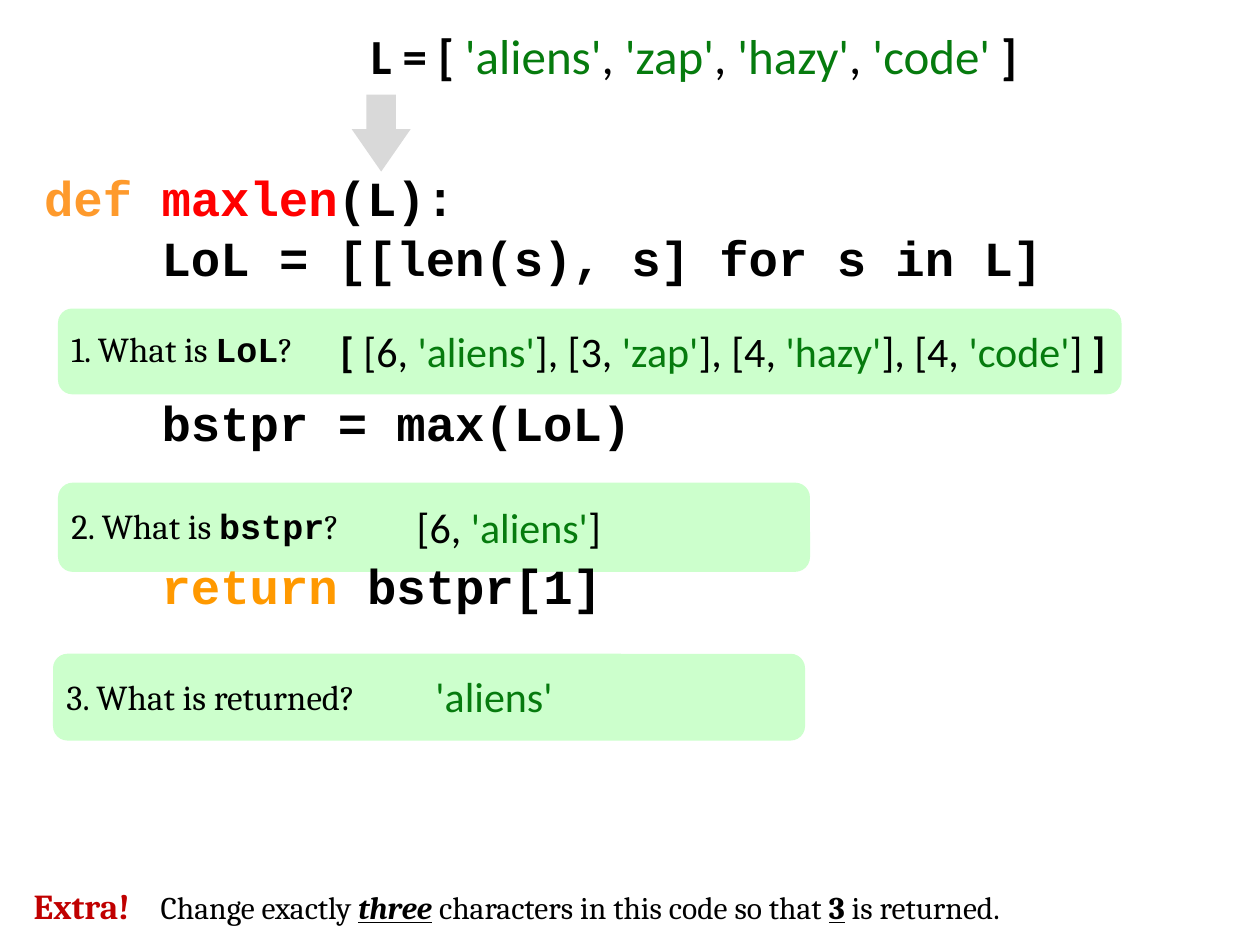
"""Build a slide that traces the maxlen function step by step."""
from lxml import etree
from pptx import Presentation
from pptx.dml.color import RGBColor
from pptx.enum.shapes import MSO_SHAPE
from pptx.enum.text import PP_ALIGN
from pptx.oxml.ns import qn
from pptx.util import Cm, Pt

ROUNDED = MSO_SHAPE.ROUNDED_RECTANGLE
DOWN_ARROW = MSO_SHAPE.DOWN_ARROW
LEFT, CENTER = PP_ALIGN.LEFT, PP_ALIGN.CENTER
BODY, CODE, ANSWER = "Cambria", "Courier New", "Calibri"
BLACK, GREEN, RED = "000000", "067B0E", "FF0000"
BOLD = {"bold": True}
STRING = {"color": GREEN}
CODE_WORD = {"name": CODE, "bold": True}


def add_box(left, top, width, height, wrap=True):
    box = slide.shapes.add_textbox(Cm(left), Cm(top), Cm(width), Cm(height))
    box.text_frame.word_wrap = wrap
    return box.text_frame


def write(para, size, name, runs, align=LEFT):
    para.alignment = align
    para.font.size = Pt(size)
    para.font.name = name
    for text, style in runs:
        span = para.add_run()
        span.text = text
        span.font.color.rgb = RGBColor.from_string(style.get("color", BLACK))
        for key, value in style.items():
            if key != "color":
                setattr(span.font, key, value)


deck = Presentation()
deck.slide_width, deck.slide_height = Cm(25.4), Cm(19.05)
slide = deck.slides.add_slide(deck.slide_layouts[6])

shapes = [
    (ROUNDED, 1.07, 13.18, 15.16, 1.75, "CCFFCC"),
    (ROUNDED, 1.17, 9.73, 15.16, 1.8, "CCFFCC"),
    (ROUNDED, 1.17, 6.22, 21.44, 1.73, "CCFFCC"),
    (DOWN_ARROW, 7.09, 1.91, 1.19, 1.55, "D9D9D9"),
]
for kind, left, top, width, height, color in shapes:
    shape = slide.shapes.add_shape(kind, Cm(left), Cm(top), Cm(width), Cm(height))
    shape.shadow.inherit = False
    shape.fill.solid()
    shape.fill.fore_color.rgb = RGBColor.from_string(color)
    shape.line.fill.background()
shape.adjustments[1] = 0.72

code_lines = [
    (0, 14, [("def ", {"color": "FE9A2C"}), ("maxlen", {"color": RED}), ("(L):", {})]),
    (2.37, 14, [("LoL = [[len(s), s] for s in L]", {})]),
    (2.37, 74, [("bstpr = max(LoL)", {})]),
    (2.37, 73, [("return ", {"color": "FF9900"}), ("bstpr[1]", {})]),
]
frame = add_box(0.64, 3.68, 23.44, 9.45)
for number, (indent, space, runs) in enumerate(code_lines):
    para = frame.add_paragraph() if number else frame.paragraphs[0]
    write(para, 28, CODE, runs)
    para.font.bold = True
    para.line_spacing = 0.6
    para.space_before = Pt(space)
    para._p.get_or_add_pPr().set("marL", str(Cm(indent)))

questions = [
    (1.19, 6.78, 5.94, 0.76, [("1. What is ", {}), ("LoL", CODE_WORD), ("?", {})]),
    (1.19, 10.34, 6.1, 0.76, [("2. What is ", {}), ("bstpr", CODE_WORD), ("?", {})]),
    (1.09, 13.79, 6.65, 0.81, [("3. What is returned?", {})]),
]
for left, top, width, height, runs in questions:
    para = add_box(left, top, width, height, wrap=False).paragraphs[0]
    write(para, 20, BODY, runs)
    para.line_spacing = 0.6
    para.space_before = Pt(10)

words = ["'aliens'", "'zap'", "'hazy'", "'code'"]
argument = [("L = [ ", BOLD)]
pairs = [("[ ", BOLD)]
for number, word in enumerate(words):
    length = len(word) - 2
    argument += [(", ", {})] * (number > 0) + [(word, STRING)]
    pairs += [(f"], [{length}, " if number else f"[{length}, ", {}), (word, STRING)]
argument.append((" ]", BOLD))
pairs += [("] ", {}), ("]", BOLD)]

answers = [
    (6.88, 0.38, 14.22, 1.45, 28, CENTER, argument),
    (6.55, 6.43, 16.05, 1.27, 24, CENTER, pairs),
    (8.15, 9.98, 4.27, 1.27, 24, LEFT, [("[6, ", {}), (words[0], STRING), ("]", {})]),
    (8.51, 13.39, 2.9, 1.27, 24, CENTER, [(words[0], STRING)]),
]
for left, top, width, height, size, align, runs in answers:
    para = add_box(left, top, width, height, wrap=False).paragraphs[0]
    write(para, size, ANSWER, runs, align)

para = add_box(0.43, 17.7, 23.57, 1.12).paragraphs[0]
write(para, 18, BODY, [
    ("Extra!\t", {"color": "C00000", "bold": True, "size": Pt(20)}),
    ("Change exactly ", {}),
    ("three", {"bold": True, "italic": True, "underline": True}),
    (" characters in this code so that ", {}),
    ("3", {"bold": True, "underline": True}),
    (" is returned.", {}),
])
para.space_before = Pt(9)
tabs = etree.Element(qn("a:tabLst"))
etree.SubElement(tabs, qn("a:tab"), pos=str(Cm(2.56)), algn="l")
para._p.get_or_add_pPr().find(qn("a:spcBef")).addnext(tabs)

deck.save("out.pptx")
